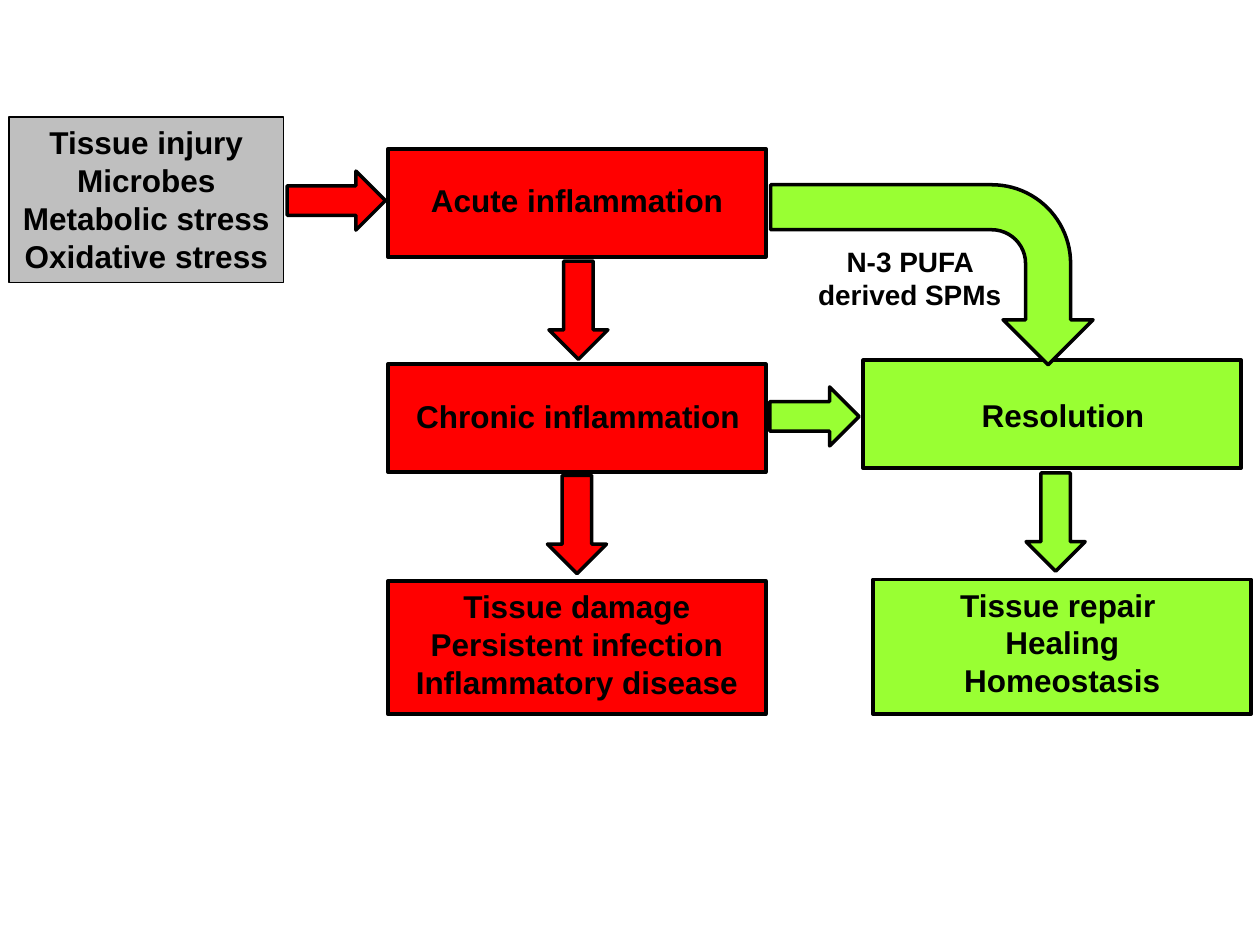
import pptx
import pptx.dml.color
import pptx.enum.shapes
import pptx.enum.text
import pptx.util

Cm = pptx.util.Cm
RGBColor = pptx.dml.color.RGBColor
SHAPE = pptx.enum.shapes.MSO_SHAPE

BLACK = RGBColor(0x00, 0x00, 0x00)
GREY = RGBColor(0xBF, 0xBF, 0xBF)
RED = RGBColor(0xFF, 0x00, 0x00)
GREEN = RGBColor(0x99, 0xFF, 0x33)

STAGE_WIDTH = 7.62
LINE_HEIGHT = 0.76
LABEL_PADDING = 0.26
ARROW_LENGTH = 1.98
ARROW_BREADTH = 1.19


def add_outlined(slide, kind, box, colour, line_width=2):
    shape = slide.shapes.add_shape(kind, *(Cm(length) for length in box))
    shape.shadow.inherit = False
    shape.fill.solid()
    shape.fill.fore_color.rgb = colour
    shape.line.color.rgb = BLACK
    shape.line.width = pptx.util.Pt(line_width)
    return shape


def write_lines(shape, lines, size=18, wrap=False):
    """Fill a shape with bold, centred paragraphs."""
    frame = shape.text_frame
    frame.word_wrap = wrap
    frame.auto_size = pptx.enum.text.MSO_AUTO_SIZE.SHAPE_TO_FIT_TEXT
    frame.vertical_anchor = pptx.enum.text.MSO_ANCHOR.TOP
    for index, line in enumerate(lines):
        paragraph = frame.add_paragraph() if index else frame.paragraphs[0]
        paragraph.alignment = pptx.enum.text.PP_ALIGN.CENTER
        run = paragraph.add_run()
        run.text = line
        run.font.name = "Arial"
        run.font.size = pptx.util.Pt(size)
        run.font.bold = True
        run.font.color.rgb = BLACK


def add_label(slide, box, lines, size=18, wrap=False):
    label = slide.shapes.add_textbox(*(Cm(length) for length in box))
    write_lines(label, lines, size, wrap)


def add_stage(slide, left, top, height, colour, label_offset, label_width, lines):
    """Draw a stage box; the label's offset is relative to its top left corner."""
    add_outlined(slide, SHAPE.RECTANGLE, (left, top, STAGE_WIDTH, height), colour)
    across, down = label_offset
    label_height = LINE_HEIGHT * len(lines) + LABEL_PADDING
    add_label(slide, (left + across, top + down, label_width, label_height), lines)


def add_triggers(slide, left, top):
    triggers = add_outlined(slide, SHAPE.RECTANGLE, (left, top, 5.54, 3.33), GREY, 0.75)
    write_lines(triggers, ["Tissue injury", "Microbes",
                           "Metabolic stress", "Oxidative stress"])


def add_inflammation_column(slide, left):
    add_stage(slide, left, 3, 2.18, RED, (0.59, 0.53), 6.45, ["Acute inflammation"])
    add_stage(slide, left, 7.34, 2.18, RED, (0.28, 0.53), 7.11, ["Chronic inflammation"])
    add_stage(slide, left, 11.71, 2.69, RED, (0.28, 0), 7.06,
              ["Tissue damage", "Persistent infection", "Inflammatory disease"])


def add_resolution_column(slide, left):
    add_stage(slide, left, 7.26, 2.18, GREEN, (2.11, 0.59), 3.84, ["Resolution"])
    add_stage(slide, left + 0.2, 11.68, 2.72, GREEN, (1.48, 0), 4.67,
              ["Tissue repair ", "Healing", "Homeostasis"])


def add_arrow(slide, left, top, colour, length=ARROW_LENGTH, rotation=0):
    arrow = add_outlined(slide, SHAPE.RIGHT_ARROW,
                         (left, top, length, ARROW_BREADTH), colour)
    arrow.rotation = rotation


def add_arrows(slide):
    add_arrow(slide, 5.79, 3.45, RED)
    add_arrow(slide, 15.52, 7.8, GREEN, length=1.8)
    for left, top, colour in ((10.67, 5.66, RED), (10.64, 9.98, RED),
                              (20.29, 9.93, GREEN)):
        add_arrow(slide, left, top, colour, rotation=90)


def add_resolving_path(slide, left, top):
    """Draw the bent arrow from acute inflammation to resolution, with its label."""
    arrow = add_outlined(slide, SHAPE.BENT_ARROW, (left, top, 3.63, 6.5), GREEN)
    arrow.rotation = 90
    add_label(slide, (left - 0.99, top + 2.51, 4.72, 1.63),
              ["N-3 PUFA derived SPMs"], size=16, wrap=True)


def main():
    presentation = pptx.Presentation()
    presentation.slide_width = Cm(25.4)
    presentation.slide_height = Cm(19.05)
    slide = presentation.slides.add_slide(presentation.slide_layouts[6])
    add_resolution_column(slide, 17.4)
    add_inflammation_column(slide, 7.82)
    add_triggers(slide, 0.18, 2.36)
    add_arrows(slide)
    add_resolving_path(slide, 16.97, 2.29)
    presentation.save("out.pptx")


if __name__ == "__main__":
    main()
